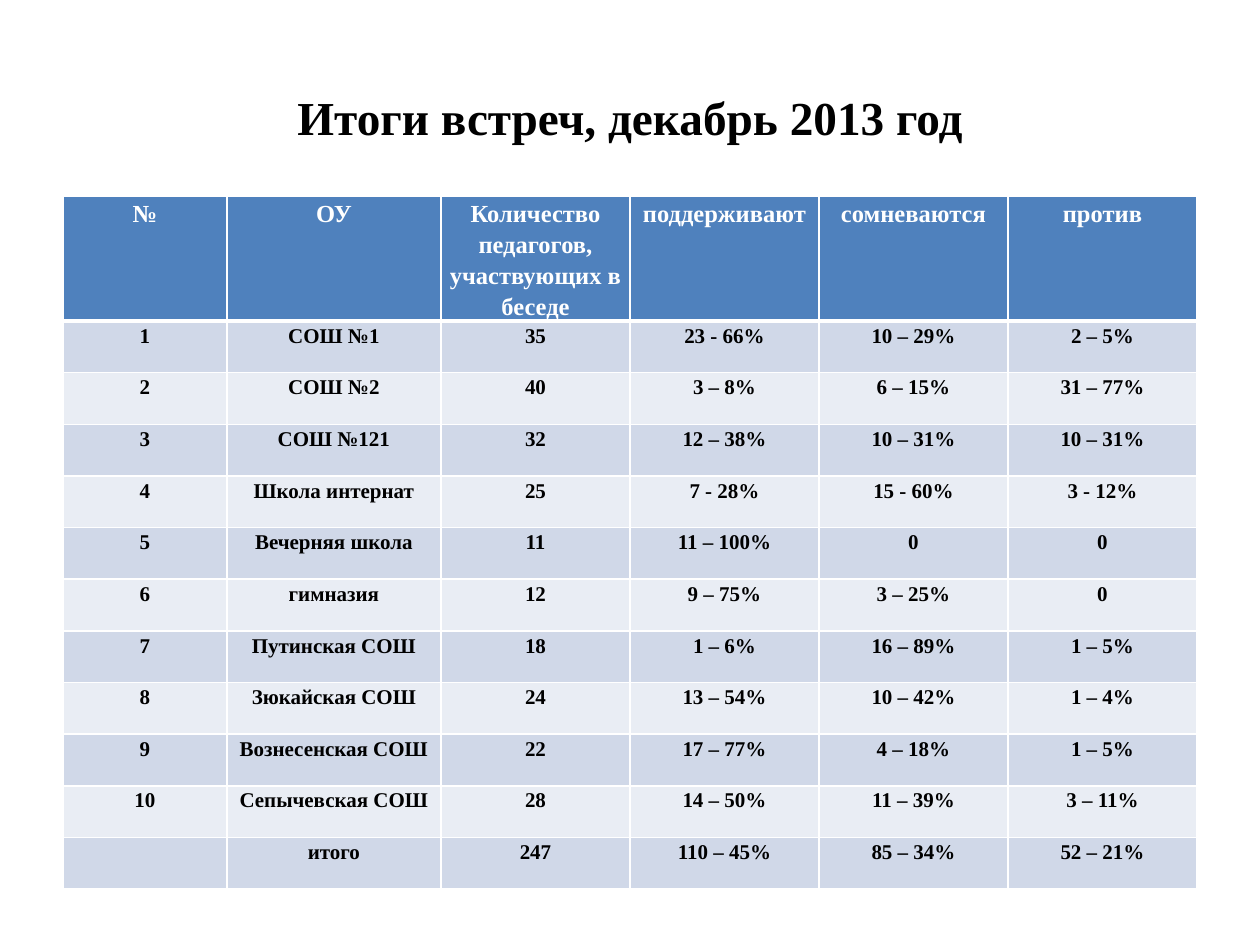
from lxml import etree
from pptx import Presentation
from pptx.dml.color import RGBColor
from pptx.enum.text import MSO_ANCHOR, PP_ALIGN
from pptx.oxml.ns import qn
from pptx.util import Inches, Pt

TITLE = "Итоги встреч, декабрь 2013 год"
HEADER = ("№", "ОУ", "Количество\nпедагогов, участвующих в беседе",
          "поддерживают", "сомневаются", "против")
RESULTS = [
    ("1", "СОШ №1", "35", "23 - 66%", "10 – 29%", "2 – 5%"),
    ("2", "СОШ №2", "40", "3 – 8%", "6 – 15%", "31 – 77%"),
    ("3", "СОШ №121", "32", "12 – 38%", "10 – 31%", "10 – 31%"),
    ("4", "Школа интернат", "25", "7 - 28%", "15 - 60%", "3 - 12%"),
    ("5", "Вечерняя школа", "11", "11 – 100%", "0", "0"),
    ("6", "гимназия", "12", "9 – 75%", "3 – 25%", "0"),
    ("7", "Путинская СОШ", "18", "1 – 6%", "16 – 89%", "1 – 5%"),
    ("8", "Зюкайская СОШ", "24", "13 – 54%", "10 – 42%", "1 – 4%"),
    ("9", "Вознесенская СОШ", "22", "17 – 77%", "4 – 18%", "1 – 5%"),
    ("10", "Сепычевская СОШ", "28", "14 – 50%", "11 – 39%", "3 – 11%"),
    ("", "итого", "247", "110 – 45%", "85 – 34%", "52 – 21%"),
]
COLUMN_WIDTHS = (1.3, 1.7, 1.5, 1.5, 1.5, 1.5)
HEADER_HEIGHT, ROW_HEIGHT = 0.86, 0.41

FONT = "Times New Roman"
CENTER, TOP, MIDDLE = PP_ALIGN.CENTER, MSO_ANCHOR.TOP, MSO_ANCHOR.MIDDLE
BLACK = RGBColor(0x00, 0x00, 0x00)
WHITE = RGBColor(0xFF, 0xFF, 0xFF)
BLUE = RGBColor(0x4F, 0x81, 0xBD)
BANDS = (RGBColor(0xD0, 0xD8, 0xE8), RGBColor(0xE9, 0xED, 0xF4))


def format_paragraph(para, size, color):
    para.alignment = CENTER
    para.font.name = FONT
    para.font.size = Pt(size)
    para.font.bold = True
    para.font.color.rgb = color


def add_border(cell, side, width):
    properties = cell._tc.get_or_add_tcPr()
    line = etree.SubElement(properties, qn(f"a:ln{side}"), w=str(Pt(width)))
    fill = etree.SubElement(line, qn("a:solidFill"))
    etree.SubElement(fill, qn("a:srgbClr"), val=str(WHITE))


def format_cell(cell, text, row_index):
    is_header = row_index == 0
    top_width = 3 if row_index == 1 else 1
    bottom_width = 3 if is_header else 1
    for side, width in (("L", 1), ("R", 1), ("T", top_width), ("B", bottom_width)):
        add_border(cell, side, width)
    cell.fill.solid()
    cell.fill.fore_color.rgb = BLUE if is_header else BANDS[(row_index - 1) % 2]
    cell.margin_left = cell.margin_right = Inches(0.07)
    cell.margin_top = cell.margin_bottom = 0
    cell.vertical_anchor = TOP
    cell.text = text
    for para in cell.text_frame.paragraphs:
        format_paragraph(para, 14 if is_header else 12, WHITE if is_header else BLACK)
        para.line_spacing = 1.15


def main():
    deck = Presentation()
    deck.slide_width, deck.slide_height = Inches(10), Inches(7.5)
    page = deck.slides.add_slide(deck.slide_layouts[5])

    title = page.shapes.title
    title.left, title.top = Inches(0.5), Inches(0.3)
    title.width, title.height = Inches(9), Inches(1.25)
    title.text_frame.text = TITLE
    title.text_frame.vertical_anchor = MIDDLE
    format_paragraph(title.text_frame.paragraphs[0], 27, BLACK)

    rows = [HEADER] + RESULTS
    heights = [HEADER_HEIGHT] + [ROW_HEIGHT] * len(RESULTS)
    table = page.shapes.add_table(
        len(rows), len(HEADER), Inches(0.5), Inches(1.56),
        Inches(sum(COLUMN_WIDTHS)), Inches(sum(heights))).table
    for column, width in zip(table.columns, COLUMN_WIDTHS):
        column.width = Inches(width)
    for row_index, (row, height, texts) in enumerate(zip(table.rows, heights, rows)):
        row.height = Inches(height)
        for cell, text in zip(row.cells, texts):
            format_cell(cell, text, row_index)

    deck.save("out.pptx")


if __name__ == "__main__":
    main()
